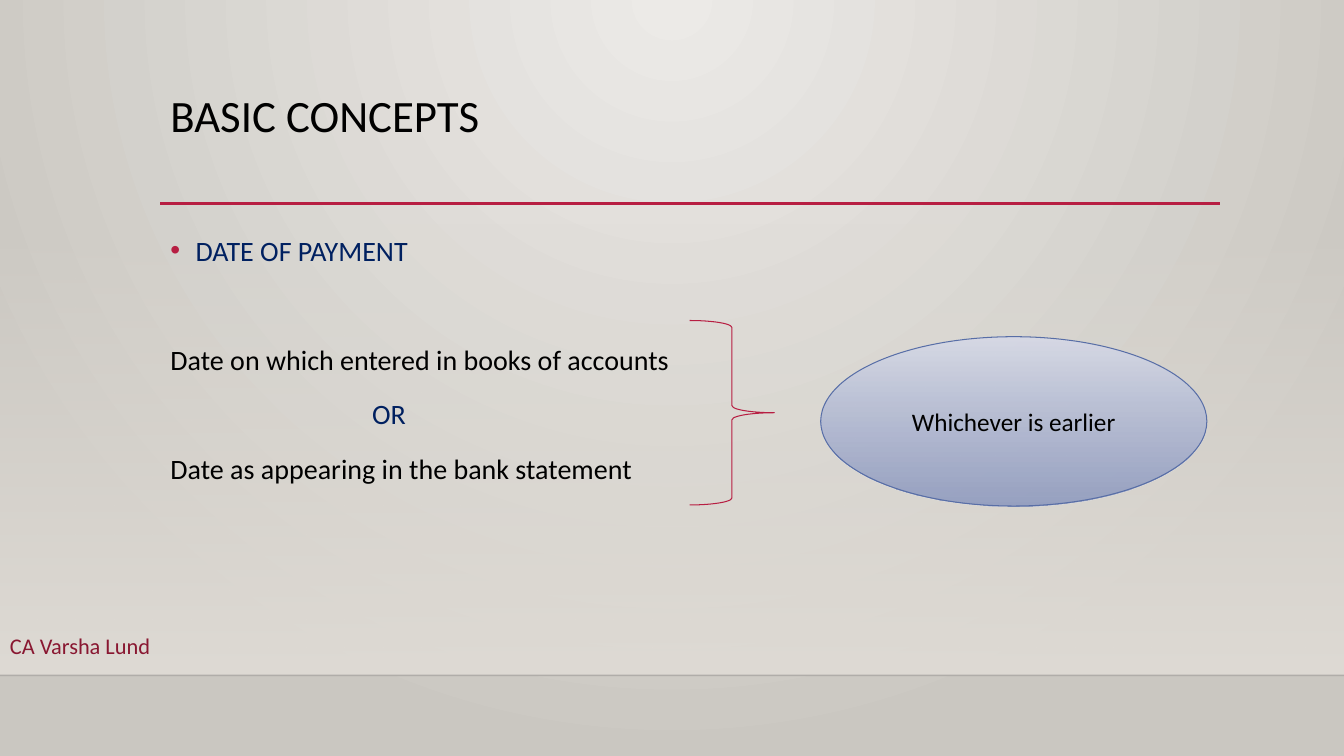
from lxml.etree import SubElement
from pptx import Presentation
from pptx.dml.color import RGBColor
from pptx.enum.shapes import MSO_CONNECTOR, MSO_SHAPE
from pptx.enum.text import MSO_ANCHOR, MSO_AUTO_SIZE, PP_ALIGN
from pptx.oxml import parse_xml
from pptx.oxml.ns import nsdecls, qn
from pptx.util import Inches, Pt

BLACK = RGBColor(0x00, 0x00, 0x00)
NAVY = RGBColor(0x00, 0x20, 0x60)
CRIMSON = RGBColor(0xB7, 0x1E, 0x42)
MAROON = RGBColor(0x89, 0x17, 0x31)
SLATE = RGBColor(0x58, 0x6E, 0xA6)
NEAR_BLACK = RGBColor(0x00, 0x00, 0x01)
PALE_STONE = RGBColor(0xEC, 0xEA, 0xE7)
DARK_STONE = RGBColor(0xCA, 0xC7, 0xC1)
FLOOR_STONE = RGBColor(0xDF, 0xDB, 0xD5)
PALE_BLUE = RGBColor(0xD6, 0xD9, 0xE5)
DUSK_BLUE = RGBColor(0x92, 0x9D, 0xC0)

DOWNWARD = '<a:lin ang="5400000" scaled="0"/>'
FROM_TOP = ('<a:path path="circle">'
            '<a:fillToRect l="43000" t="0" r="43000" b="100000"/></a:path>')


def paint_gradient(properties, start, end, direction, alphas=(100, 100)):
    stops = "".join(
        f'<a:gs pos="{place}"><a:srgbClr val="{color}">'
        f'<a:alpha val="{alpha * 1000}"/></a:srgbClr></a:gs>'
        for place, color, alpha in zip((0, 100000), (start, end), alphas))
    gradient = parse_xml(f'<a:gradFill {nsdecls("a")} rotWithShape="1">'
                         f'<a:gsLst>{stops}</a:gsLst>{direction}</a:gradFill>')
    properties.replace(properties.find(qn("a:solidFill")), gradient)


def add_shape(slide, preset, left, top, width, height):
    shape = slide.shapes.add_shape(
        preset, Inches(left), Inches(top), Inches(width), Inches(height))
    shape.shadow.inherit = False
    return shape


def add_rule(slide, left, right, y, color, weight, alpha=100):
    rule = slide.shapes.add_connector(
        MSO_CONNECTOR.STRAIGHT, Inches(left), Inches(y), Inches(right), Inches(y))
    rule.line.color.rgb = color
    rule.line.width = Pt(weight)
    properties = rule._element.spPr
    tint = properties.find(".//" + qn("a:srgbClr"))
    SubElement(tint, qn("a:alpha"), val=str(alpha * 1000))
    SubElement(properties, qn("a:effectLst"))


def place(placeholder, left, top, width, height):
    placeholder.left, placeholder.top = Inches(left), Inches(top)
    placeholder.width, placeholder.height = Inches(width), Inches(height)
    frame = placeholder.text_frame
    frame.word_wrap = True
    frame.auto_size = MSO_AUTO_SIZE.NONE
    frame.vertical_anchor = MSO_ANCHOR.TOP
    return frame


def write(paragraph, text, size, color, align=PP_ALIGN.LEFT):
    paragraph.text = text
    paragraph.alignment = align
    font = paragraph.font
    font.name, font.size, font.color.rgb = "Calibri", Pt(size), color


def set_bullet(paragraph, indent, bulleted):
    properties = paragraph._p.get_or_add_pPr()
    properties.set("marL", str(Inches(indent)))
    properties.set("indent", str(-Inches(indent) if bulleted else 0))
    if bulleted:
        color = SubElement(properties, qn("a:buClr"))
        SubElement(color, qn("a:srgbClr"), val=str(CRIMSON))
        SubElement(properties, qn("a:buFont"), typeface="Arial")
        SubElement(properties, qn("a:buChar"), char="•")
    else:
        SubElement(properties, qn("a:buNone"))


def add_backdrop(slide):
    slide.background.fill.solid()
    paint_gradient(slide._element.find(".//" + qn("p:bgPr")),
                   PALE_STONE, DARK_STONE, FROM_TOP)
    floor = add_shape(slide, MSO_SHAPE.RECTANGLE, 0, 2.21, 13.33, 4.49)
    floor.fill.solid()
    floor.line.fill.background()
    paint_gradient(floor._element.spPr, FLOOR_STONE, FLOOR_STONE, DOWNWARD, (0, 100))
    add_rule(slide, 0, 13.33, 6.7, NEAR_BLACK, 1, 20)
    add_rule(slide, 1.59, 12.1, 2.02, CRIMSON, 2.5)


def add_heading(slide):
    heading = place(slide.shapes.title, 1.59, 0.88, 10.5, 1.15).paragraphs[0]
    write(heading, "BASIC CONCEPTS", 32, BLACK)
    heading.line_spacing = 0.9


def add_payment_dates(slide):
    frame = place(slide.placeholders[1], 1.59, 2.2, 10.5, 3.77)
    entries = [
        ("DATE OF PAYMENT", NAVY, 0.25, True, 0),
        ("Date on which entered in books of accounts", BLACK, 0, False, 49),
        ("OR", NAVY, 2, False, 10),
        ("Date as appearing in the bank statement", BLACK, 0, False, 10),
    ]
    for index, (text, color, indent, bulleted, gap) in enumerate(entries):
        entry = frame.add_paragraph() if index else frame.paragraphs[0]
        entry.line_spacing = 1.2
        entry.space_before = Pt(gap)
        set_bullet(entry, indent, bulleted)
        write(entry, text, 20, color)


def add_outcome(slide):
    brace = add_shape(slide, MSO_SHAPE.RIGHT_BRACE, 6.84, 3.18, 0.84, 1.83)
    brace.fill.background()
    brace.line.color.rgb = CRIMSON
    brace.line.width = Pt(0.75)

    verdict = add_shape(slide, MSO_SHAPE.OVAL, 8.14, 3.34, 3.83, 1.68)
    verdict.fill.solid()
    paint_gradient(verdict._element.spPr, PALE_BLUE, DUSK_BLUE, DOWNWARD, (100, 92))
    verdict.line.color.rgb = SLATE
    verdict.line.width = Pt(0.75)
    verdict.text_frame.vertical_anchor = MSO_ANCHOR.MIDDLE
    write(verdict.text_frame.paragraphs[0], "Whichever is earlier", 18, BLACK,
          PP_ALIGN.CENTER)


def add_author(slide):
    author = slide.shapes.add_textbox(
        Inches(0), Inches(6.22), Inches(3.58), Inches(0.37)).text_frame
    author.word_wrap = True
    author.auto_size = MSO_AUTO_SIZE.SHAPE_TO_FIT_TEXT
    write(author.paragraphs[0], "CA Varsha Lund", 16, MAROON)


def main():
    deck = Presentation()
    deck.slide_width, deck.slide_height = Inches(13.33), Inches(7.5)
    slide = deck.slides.add_slide(deck.slide_layouts[1])
    add_backdrop(slide)
    for placeholder in list(slide.placeholders):
        slide.shapes._spTree.append(placeholder._element)
    add_heading(slide)
    add_payment_dates(slide)
    add_outcome(slide)
    add_author(slide)
    deck.save("out.pptx")


if __name__ == "__main__":
    main()
